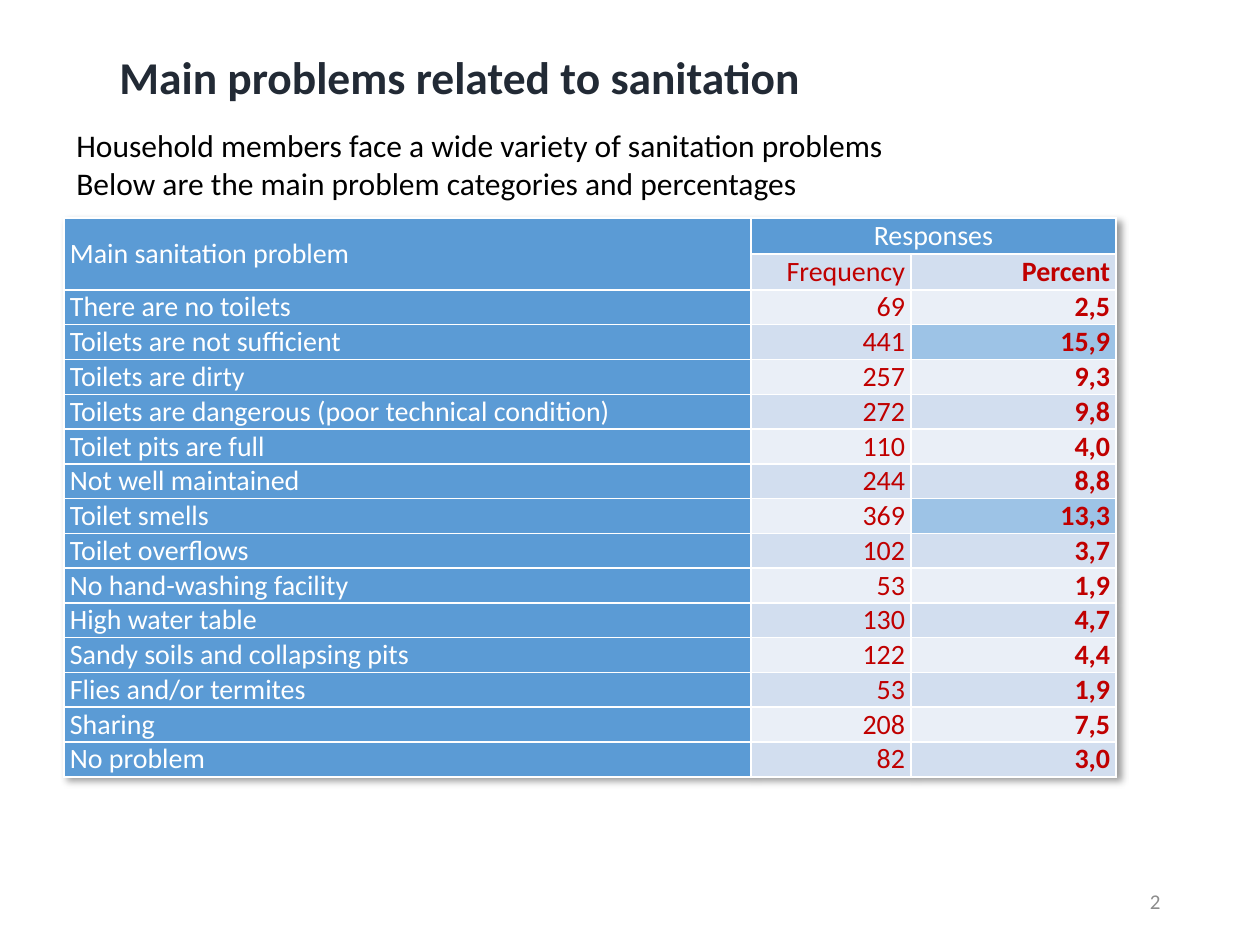
from dataclasses import dataclass

from lxml import etree
from pptx import Presentation
from pptx import util as u
from pptx.dml.color import RGBColor
from pptx.enum import text
from pptx.oxml import parse_xml
from pptx.oxml.ns import nsdecls

EMU_PER_PX = 914400 / 126
FONT = "Calibri"

WHITE = RGBColor(0xFF, 0xFF, 0xFF)
BLACK = RGBColor(0x00, 0x00, 0x00)
NAVY = RGBColor(0x22, 0x2A, 0x35)
GREY = RGBColor(0x8C, 0x8C, 0x8C)
RED = RGBColor(0xC0, 0x00, 0x00)
BLUE = RGBColor(0x5B, 0x9B, 0xD5)
HIGHLIGHT = RGBColor(0x9D, 0xC3, 0xE6)
BANDS = (RGBColor(0xEA, 0xEF, 0xF7), RGBColor(0xD2, 0xDE, 0xEF))

LEFT = text.PP_ALIGN.LEFT
CENTER = text.PP_ALIGN.CENTER
RIGHT = text.PP_ALIGN.RIGHT
TOP = text.MSO_ANCHOR.TOP
MIDDLE = text.MSO_ANCHOR.MIDDLE


@dataclass(frozen=True)
class Label:
    content: str
    left: int
    top: int
    width: int
    height: int
    size: int
    color: RGBColor
    bold: bool = False
    align: text.PP_ALIGN = LEFT
    anchor: text.MSO_ANCHOR = MIDDLE
    line_spacing: float = 1.0


@dataclass(frozen=True)
class Problem:
    name: str
    frequency: str
    percent: str
    highlighted: bool = False


LABELS = (
    Label("Main problems related to sanitation", 107, -5, 1153, 169, 26, NAVY,
          bold=True, line_spacing=0.9),
    Label("2", 890, 876, 283, 50, 12, GREY, align=RIGHT),
    Label("Household members face a wide variety of sanitation problems\n"
          "Below are the main problem categories and percentages",
          64, 120, 1091, 89, 18, BLACK, anchor=TOP),
)

PROBLEMS = (
    Problem("There are no toilets", "69", "2,5"),
    Problem("Toilets are not sufficient", "441", "15,9", highlighted=True),
    Problem("Toilets are dirty", "257", "9,3"),
    Problem("Toilets are dangerous (poor technical condition)", "272", "9,8"),
    Problem("Toilet pits are full", "110", "4,0"),
    Problem("Not well maintained", "244", "8,8"),
    Problem("Toilet smells", "369", "13,3", highlighted=True),
    Problem("Toilet overflows", "102", "3,7"),
    Problem("No hand-washing facility", "53", "1,9"),
    Problem("High water table", "130", "4,7"),
    Problem("Sandy soils and collapsing pits", "122", "4,4"),
    Problem("Flies and/or termites", "53", "1,9"),
    Problem("Sharing", "208", "7,5"),
    Problem("No problem", "82", "3,0"),
)

TABLE_LEFT, TABLE_TOP = 64, 218
COLUMN_WIDTHS = (687, 160, 205)
HEADER_ROWS = 2
HEADER_HEIGHT = 36
BODY_HEIGHT = 487


def px(length: float) -> u.Emu:
    return u.Emu(round(length * EMU_PER_PX))


def format_text(frame, size: int, color: RGBColor, bold: bool, align) -> None:
    for paragraph in frame.paragraphs:
        paragraph.alignment = align
        for run in paragraph.runs:
            run.font.name = FONT
            run.font.size = u.Pt(size)
            run.font.bold = bold
            run.font.color.rgb = color


def add_label(slide, label: Label) -> None:
    box = slide.shapes.add_textbox(
        px(label.left), px(label.top), px(label.width), px(label.height))
    frame = box.text_frame
    frame.word_wrap = True
    frame.vertical_anchor = label.anchor
    frame.text = label.content
    format_text(frame, label.size, label.color, label.bold, label.align)
    for paragraph in frame.paragraphs:
        paragraph.line_spacing = label.line_spacing


def add_borders(cell) -> None:
    properties = cell._tc.get_or_add_tcPr()
    for side in ("lnL", "lnR", "lnT", "lnB"):
        properties.append(parse_xml(
            f'<a:{side} {nsdecls("a")} w="{u.Pt(1)}"><a:solidFill>'
            f'<a:srgbClr val="{WHITE}"/></a:solidFill></a:{side}>'))


def fill_cell(cell, content: str, fill: RGBColor, color: RGBColor = WHITE,
              bold: bool = False, align: text.PP_ALIGN = LEFT) -> None:
    add_borders(cell)
    cell.fill.solid()
    cell.fill.fore_color.rgb = fill
    cell.vertical_anchor = MIDDLE
    cell.margin_left = cell.margin_right = px(6)
    cell.margin_top = cell.margin_bottom = 0
    cell.text_frame.text = content
    format_text(cell.text_frame, 16, color, bold, align)


def add_table_shadow(table) -> None:
    effects = parse_xml(
        f'<a:effectLst {nsdecls("a")}><a:outerShdw blurRad="50800" dist="38100" '
        'dir="2700000" algn="tl" rotWithShape="0"><a:prstClr val="black">'
        '<a:alpha val="40000"/></a:prstClr></a:outerShdw></a:effectLst>')
    table._tbl.tblPr.insert(0, effects)


def add_problem_table(slide) -> None:
    row_count = HEADER_ROWS + len(PROBLEMS)
    table = slide.shapes.add_table(
        row_count, len(COLUMN_WIDTHS), px(TABLE_LEFT), px(TABLE_TOP),
        px(sum(COLUMN_WIDTHS)),
        px(HEADER_ROWS * HEADER_HEIGHT + BODY_HEIGHT)).table
    table.first_row = table.horz_banding = False
    add_table_shadow(table)
    for column, width in zip(table.columns, COLUMN_WIDTHS):
        column.width = px(width)
    for index, row in enumerate(table.rows):
        is_header = index < HEADER_ROWS
        row.height = px(HEADER_HEIGHT if is_header else BODY_HEIGHT / len(PROBLEMS))

    fill_cell(table.cell(0, 0), "Main sanitation problem", BLUE)
    fill_cell(table.cell(0, 1), "Responses", BLUE, align=CENTER)
    for position in ((0, 2), (1, 0)):
        fill_cell(table.cell(*position), "", BLUE)
    table.cell(0, 0).merge(table.cell(1, 0))
    table.cell(0, 1).merge(table.cell(0, 2))
    fill_cell(table.cell(1, 1), "Frequency", BANDS[1], RED, align=RIGHT)
    fill_cell(table.cell(1, 2), "Percent", BANDS[1], RED, bold=True, align=RIGHT)

    for index, problem in enumerate(PROBLEMS):
        row = index + HEADER_ROWS
        band = BANDS[index % 2]
        percent_fill = HIGHLIGHT if problem.highlighted else band
        fill_cell(table.cell(row, 0), problem.name, BLUE)
        fill_cell(table.cell(row, 1), problem.frequency, band, RED, align=RIGHT)
        fill_cell(table.cell(row, 2), problem.percent, percent_fill, RED,
                  bold=True, align=RIGHT)


def main() -> None:
    presentation = Presentation()
    presentation.slide_width = px(1260)
    presentation.slide_height = px(945)
    slide = presentation.slides.add_slide(presentation.slide_layouts[6])
    add_problem_table(slide)
    for label in LABELS:
        add_label(slide, label)
    presentation.save("out.pptx")


if __name__ == "__main__":
    main()
